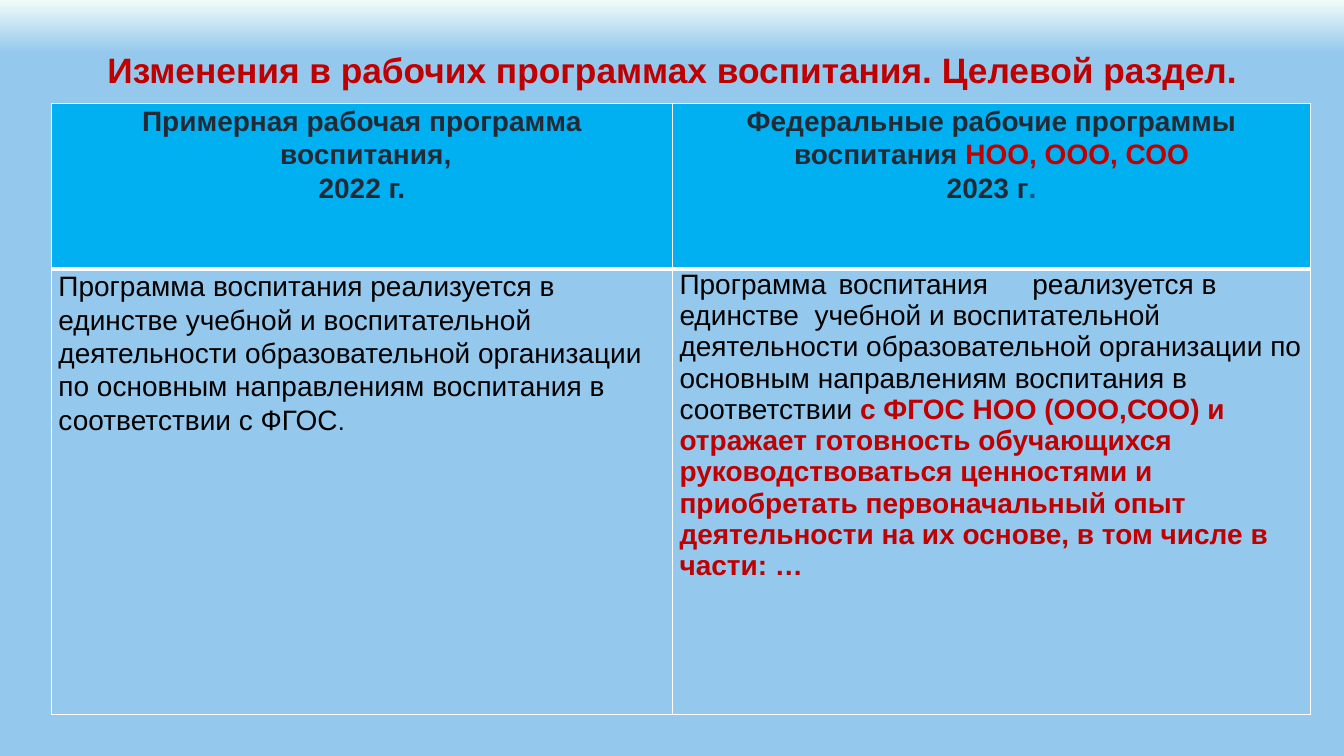
import pptx
import pptx.util
import pptx.dml.color
import pptx.enum.text
import pptx.oxml
import pptx.oxml.ns

THEME = {
    "font": "Arial",
    "sky": "94C8ED", "mist": "F1FCF9", "header": "00B0F0", "border": "FFFFFF",
    "accent": "C00000", "dark": "222A35", "blue": "16537F", "black": "000000",
    "title": 25.2, "text": 20, "small": 18,
    "thin": 1, "thick": 3,
}
ALIGN = pptx.enum.text.PP_ALIGN
NAMESPACE = pptx.oxml.ns.nsdecls("a")


def write(frame, paragraphs, align, spacing):
    for index, spans in enumerate(paragraphs):
        para = frame.paragraphs[0] if index == 0 else frame.add_paragraph()
        para.alignment = align
        para.line_spacing = spacing
        for text, color, size, bold in spans:
            span = para.add_run()
            span.text = text
            span.font.name = THEME["font"]
            span.font.size = pptx.util.Pt(THEME[size])
            span.font.bold = bold
            span.font.color.rgb = pptx.dml.color.RGBColor.from_string(THEME[color])


deck = pptx.Presentation()
deck.slide_width = pptx.util.Inches(13.33)
deck.slide_height = pptx.util.Inches(7.5)
page = deck.slides.add_slide(deck.slide_layouts[6])

backdrop = page.background.fill
backdrop.gradient()
backdrop.gradient_angle = 270
stops = next(page.element.iter(pptx.oxml.ns.qn("a:gsLst")))
for stop in list(stops):
    stops.remove(stop)
for percent, color in ((0, "mist"), (7, "sky"), (100, "sky")):
    stops.append(pptx.oxml.parse_xml(
        f'<a:gs {NAMESPACE} pos="{percent * 1000}"><a:srgbClr val="{THEME[color]}"/></a:gs>'))

title = page.shapes.add_textbox(*map(pptx.util.Inches, (0.92, 0.4, 11.5, 0.63))).text_frame
title.word_wrap = True
title.vertical_anchor = pptx.enum.text.MSO_ANCHOR.MIDDLE
write(title, [[("Изменения в рабочих программах воспитания. Целевой раздел.",
                "accent", "title", True)]], ALIGN.CENTER, 0.9)

columns = (6.16, 6.33)
rows = (1.64, 4.42)
table = page.shapes.add_table(
    len(rows), len(columns),
    *map(pptx.util.Inches, (0.51, 1.03, sum(columns), sum(rows)))).table
for column, width in zip(table.columns, columns):
    column.width = pptx.util.Inches(width)
for row, height in zip(table.rows, rows):
    row.height = pptx.util.Inches(height)

contents = (
    (
        ([[("Примерная рабочая программа", "dark", "text", True)],
          [(" воспитания,", "dark", "text", True)],
          [("2022 г.", "dark", "text", True)]], ALIGN.CENTER, 1.07),
        ([[("Федеральные рабочие программы", "dark", "text", True)],
          [(" ", "blue", "text", True),
           ("воспитания ", "dark", "text", True),
           ("НОО, ООО, СОО ", "accent", "text", True)],
          [("2023 г", "dark", "text", True),
           (".", "blue", "text", True)]], ALIGN.CENTER, 1.07),
    ),
    (
        ([[("Программа воспитания реализуется в единстве учебной и воспитательной "
            "деятельности образовательной организации по основным направлениям "
            "воспитания в соответствии с ФГОС", "black", "text", False),
           (".", "black", "small", False)]], ALIGN.LEFT, 1.07),
        ([[("Программа\t воспитания\tреализуется в единстве  учебной и воспитательной "
            "деятельности образовательной организации по основным направлениям "
            "воспитания в соответствии ", "black", "text", False),
           ("с ФГОС НОО (ООО,СОО) и отражает готовность обучающихся "
            "руководствоваться ценностями и приобретать первоначальный опыт "
            "деятельности на их основе, в том числе в части: …",
            "accent", "text", True)]], ALIGN.LEFT, 1.0),
    ),
)
row_styles = (
    ("header", {"lnL": "thin", "lnR": "thin", "lnT": "thin", "lnB": "thick"}),
    ("sky", {"lnL": "thin", "lnR": "thin", "lnT": "thick", "lnB": "thin"}),
)
for row_index, (fill, borders) in enumerate(row_styles):
    for column_index, (paragraphs, align, spacing) in enumerate(contents[row_index]):
        cell = table.cell(row_index, column_index)
        cell.margin_left = cell.margin_right = pptx.util.Inches(0.07)
        cell.margin_top = cell.margin_bottom = 0
        cell.fill.solid()
        cell.fill.fore_color.rgb = pptx.dml.color.RGBColor.from_string(THEME[fill])
        properties = cell._tc.get_or_add_tcPr()
        for position, (edge, weight) in enumerate(borders.items()):
            properties.insert(position, pptx.oxml.parse_xml(
                f'<a:{edge} {NAMESPACE} w="{pptx.util.Pt(THEME[weight])}"><a:solidFill>'
                f'<a:srgbClr val="{THEME["border"]}"/></a:solidFill></a:{edge}>'))
        write(cell.text_frame, paragraphs, align, spacing)

deck.save("out.pptx")
